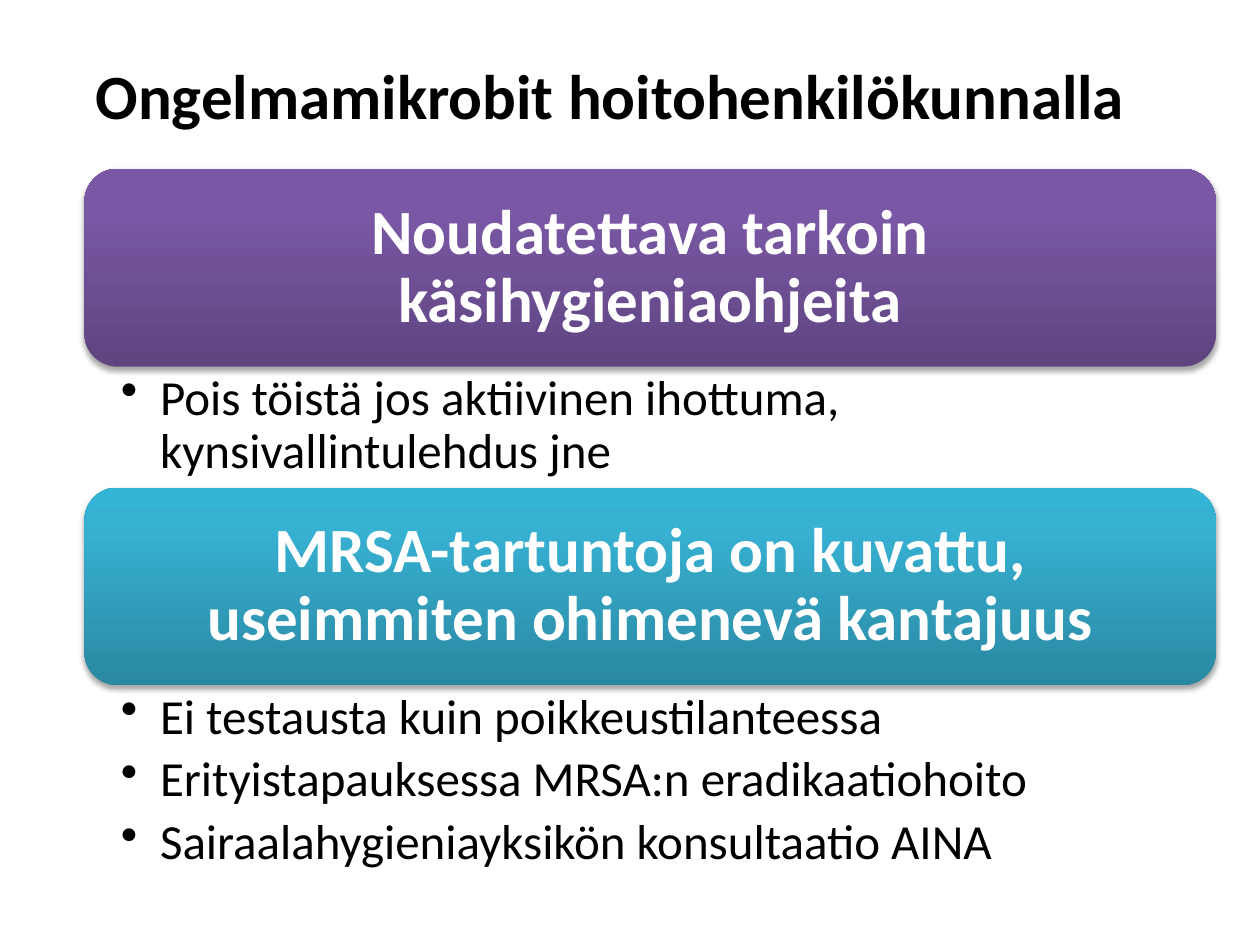
"""Build the slide on problem microbes among nursing staff."""
import dataclasses
import typing

import lxml.etree
import pptx
import pptx.dml.color
import pptx.enum.shapes
import pptx.enum.text
import pptx.oxml
import pptx.oxml.ns
import pptx.util

Inches = pptx.util.Inches
Pt = pptx.util.Pt
ALIGN = pptx.enum.text.PP_ALIGN
ANCHOR = pptx.enum.text.MSO_ANCHOR


@dataclasses.dataclass(frozen=True)
class Theme:
    font: str = "Calibri"
    dark: str = "000000"
    light: str = "FFFFFF"
    heading_size: int = 36
    bullet_size: int = 28
    purple: tuple[str, ...] = ("5F4480", "7B58A6", "7C57A8")
    teal: tuple[str, ...] = ("2A88A2", "37B1D2", "34B4D6")
    gradient_stops: tuple[int, ...] = (0, 80, 100)


@dataclasses.dataclass(frozen=True)
class Section:
    heading: str
    bullets: tuple[str, ...]
    colors: tuple[str, ...]
    bullets_height: float


THEME = Theme()
LEFT, TOP, WIDTH, BANNER_HEIGHT = 0.67, 1.34, 8.98, 1.57
SECTIONS = (
    Section(
        "Noudatettava tarkoin käsihygieniaohjeita",
        ("Pois töistä jos aktiivinen ihottuma, kynsivallintulehdus jne",),
        THEME.purple,
        0.96,
    ),
    Section(
        "MRSA-tartuntoja on kuvattu, useimmiten ohimenevä kantajuus",
        (
            "Ei testausta kuin poikkeustilanteessa",
            "Erityistapauksessa MRSA:n eradikaatiohoito",
            "Sairaalahygieniayksikön konsultaatio AINA",
        ),
        THEME.teal,
        1.59,
    ),
)


def apply(target: typing.Any, values: dict[str, typing.Any]) -> None:
    """Set every named attribute on the target."""
    for name, value in values.items():
        setattr(target, name, value)


def write(shape: typing.Any, lines: tuple[str, ...], size: int, color: str, bold: bool,
          frame_format: dict, paragraph_format: dict) -> None:
    """Write one styled paragraph for each line."""
    frame = shape.text_frame
    apply(frame, {"word_wrap": True, **frame_format})
    for index, line in enumerate(lines):
        paragraph = frame.add_paragraph() if index else frame.paragraphs[0]
        apply(paragraph, paragraph_format)
        run = paragraph.add_run()
        run.text = line
        apply(run.font, {"name": THEME.font, "size": Pt(size), "bold": bold})
        run.font.color.rgb = pptx.dml.color.RGBColor.from_string(color)


def add_bullet(paragraph: typing.Any) -> None:
    """Give a paragraph a hanging bullet."""
    properties = paragraph._p.get_or_add_pPr()
    properties.set("marL", str(Inches(0.31)))
    properties.set("indent", str(Inches(-0.31)))
    lxml.etree.SubElement(properties, pptx.oxml.ns.qn("a:buChar")).set("char", "•")


def style_banner(shape: typing.Any, colors: tuple[str, ...]) -> None:
    """Apply a rising gradient and a soft shadow."""
    namespace = pptx.oxml.ns.nsdecls("a")
    stops = "".join(
        f'<a:gs pos="{position * 1000}"><a:srgbClr val="{color}"/></a:gs>'
        for position, color in zip(THEME.gradient_stops, colors)
    )
    gradient = pptx.oxml.parse_xml(
        f'<a:gradFill {namespace} rotWithShape="1"><a:gsLst>{stops}</a:gsLst>'
        '<a:lin ang="16200000" scaled="0"/></a:gradFill>'
    )
    shadow = pptx.oxml.parse_xml(
        f'<a:outerShdw {namespace} blurRad="{Pt(3.1)}" dist="{Pt(1.8)}" dir="5400000" '
        f'rotWithShape="0"><a:srgbClr val="{THEME.dark}"><a:alpha val="35000"/>'
        "</a:srgbClr></a:outerShdw>"
    )
    shape.line.fill.background()
    shape.shadow.inherit = False
    properties = shape._element.spPr
    properties.find(pptx.oxml.ns.qn("a:prstGeom")).addnext(gradient)
    properties.find(pptx.oxml.ns.qn("a:effectLst")).append(shadow)


def add_section(slide: typing.Any, section: Section, top: float) -> float:
    """Draw a banner with its bullets and return the bottom edge."""
    banner = slide.shapes.add_shape(
        pptx.enum.shapes.MSO_SHAPE.ROUNDED_RECTANGLE,
        Inches(LEFT), Inches(top), Inches(WIDTH), Inches(BANNER_HEIGHT),
    )
    style_banner(banner, section.colors)
    margins = dict.fromkeys(
        ("margin_left", "margin_right", "margin_top", "margin_bottom"), Inches(0.15)
    )
    write(banner, (section.heading,), THEME.heading_size, THEME.light, True,
          {"vertical_anchor": ANCHOR.MIDDLE, **margins},
          {"alignment": ALIGN.CENTER, "line_spacing": 0.9})
    bullets_top = top + BANNER_HEIGHT
    bullets = slide.shapes.add_textbox(
        Inches(LEFT), Inches(bullets_top), Inches(WIDTH), Inches(section.bullets_height)
    )
    write(bullets, section.bullets, THEME.bullet_size, THEME.dark, False,
          {"margin_left": Inches(0.29), "margin_right": Inches(0.28)},
          {"level": 1, "alignment": ALIGN.LEFT, "line_spacing": 0.9, "space_after": Pt(5.6)})
    for paragraph in bullets.text_frame.paragraphs:
        add_bullet(paragraph)
    return bullets_top + section.bullets_height


def main() -> None:
    """Build and save the presentation."""
    presentation = pptx.Presentation()
    apply(presentation, {"slide_width": Inches(10), "slide_height": Inches(7.5)})
    slide = presentation.slides.add_slide(presentation.slide_layouts[6])
    title = slide.shapes.add_textbox(Inches(0.21), Inches(0.25), Inches(9.27), Inches(1))
    write(title, ("Ongelmamikrobit hoitohenkilökunnalla",), THEME.heading_size, THEME.dark, True,
          {"vertical_anchor": ANCHOR.MIDDLE}, {"alignment": ALIGN.CENTER})
    top = TOP
    for section in SECTIONS:
        top = add_section(slide, section, top)
    presentation.save("out.pptx")


if __name__ == "__main__":
    main()
